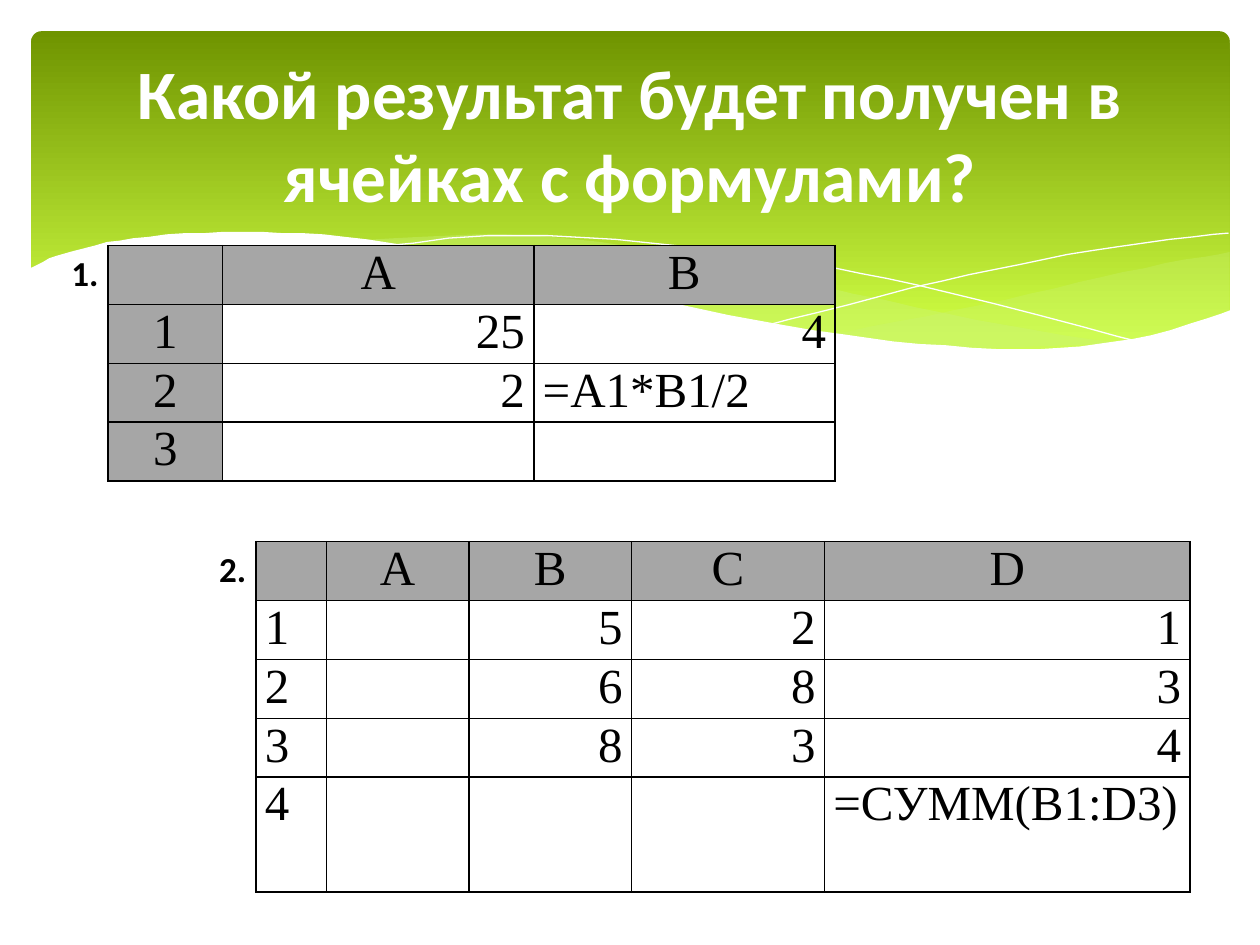
import pptx
import pptx.util
import pptx.dml.color
import pptx.enum.shapes
import pptx.enum.text
import pptx.oxml
from lxml import etree
from pptx.util import Cm

COLORS = {"dark": "6F9400", "lime": "D0FF44", "pale": "CAF278",
          "white": "FFFFFF", "black": "000000", "gray": "A6A6A6"}
TITLE = "Какой результат будет получен в ячейках с формулами?"

# Tables: label, places, column widths and row heights in cm
TABLES = [
    {"label": "1.", "left": 2.18, "top": 4.95,
     "columns": [2.31, 6.27, 6.07], "rows": [1.14] * 4, "gray_side": True,
     "cells": [["", "А", "В"],
               ["1", "25", "4"],
               ["2", "2", "=A1*B1/2"],
               ["3", "", ""]]},
    {"label": "2.", "left": 5.16, "top": 10.92,
     "columns": [1.42, 2.87, 3.28, 3.89, 7.37], "rows": [1.16] * 4 + [2.31],
     "gray_side": False,
     "cells": [["", "A", "B", "C", "D"],
               ["1", "", "5", "2", "1"],
               ["2", "", "6", "8", "3"],
               ["3", "", "8", "3", "4"],
               ["4", "", "", "", "=СУММ(B1:D3)"]]},
]
LABEL_OFFSET = 0.99

# Waves: each edge is a smooth curve through its knots (hundredths of an inch)
WAVE_UNIT = Cm(0.0254)
STEPS = 6
WAVES = [
    {"fill": "pale", "alpha": 29, "edges": [
        [(976, 200), (891, 216), (779, 242), (661, 265)],
        [(661, 265), (745, 275), (824, 277), (905, 269), (976, 247)]]},
    {"fill": "pale", "alpha": 40, "edges": [
        [(893, 273), (775, 254), (629, 222), (514, 198), (399, 186), (286, 191)],
        [(286, 191), (383, 207), (491, 232), (618, 258), (736, 275), (893, 273)]]},
    {"edges": [
        [(309, 195), (387, 187), (489, 190), (608, 204), (727, 226), (907, 272)]]},
    {"edges": [[(613, 257), (748, 223), (866, 199), (975, 185)]]},
    {"fill": "white", "alpha": 100, "edges": [
        [(977, 246), (899, 269), (809, 277), (688, 268), (555, 245), (418, 213),
         (292, 190), (193, 184), (106, 189), (52, 201), (23, 213)],
        [(23, 329), (977, 329)]]},
]


def rgb(name):
    return pptx.dml.color.RGBColor.from_string(COLORS[name])


def smooth(knots):
    """Sample a Catmull-Rom curve through the knots."""
    padded = [knots[0], *knots, knots[-1]]
    points = [knots[0]]
    for span in zip(padded, padded[1:], padded[2:], padded[3:]):
        for step in range(1, STEPS + 1):
            t = step / STEPS
            points.append(tuple(
                b + t / 2 * (c - a + t * (2 * a - 5 * b + 4 * c - d
                                          + t * (3 * b - 3 * c + d - a)))
                for a, b, c, d in zip(*span)))
    return points


def format_text(frame, size, font, color, align, bold=False):
    for para in frame.paragraphs:
        para.alignment = align
        for span in para.runs:
            span.font.size = pptx.util.Pt(size)
            span.font.name = font
            span.font.bold = bold
            span.font.color.rgb = rgb(color)


def add_wave(page, wave):
    first, *rest = [point for knots in wave["edges"] for point in smooth(knots)]
    filled = "fill" in wave
    builder = page.shapes.build_freeform(*first, scale=WAVE_UNIT)
    builder.add_line_segments(rest, close=filled)
    shape = builder.convert_to_shape()
    shape.shadow.inherit = False
    if filled:
        shape.line.fill.background()
        shape.fill.solid()
        shape.fill.fore_color.rgb = rgb(wave["fill"])
        if wave["alpha"] < 100:
            color = shape.fill._xPr.find(".//" + pptx.oxml.ns.qn("a:srgbClr"))
            etree.SubElement(color, pptx.oxml.ns.qn("a:alpha"),
                             val=str(wave["alpha"] * 1000))
    else:
        shape.fill.background()
        shape.line.color.rgb = rgb("white")
        shape.line.width = 0


def add_borders(cell):
    properties = cell._tc.get_or_add_tcPr()
    namespace = pptx.oxml.ns.nsdecls("a")
    for index, side in enumerate(("lnL", "lnR", "lnT", "lnB")):
        properties.insert(index, pptx.oxml.parse_xml(
            f'<a:{side} {namespace} w="12700"><a:solidFill>'
            f'<a:srgbClr val="{COLORS["black"]}"/></a:solidFill></a:{side}>'))


def cell_align(text, column, gray):
    if gray:
        return pptx.enum.text.PP_ALIGN.CENTER
    if column == 0 or text.startswith("="):
        return pptx.enum.text.PP_ALIGN.LEFT
    return pptx.enum.text.PP_ALIGN.RIGHT


def add_sheet(page, sheet):
    widths, heights = sheet["columns"], sheet["rows"]
    table = page.shapes.add_table(
        len(heights), len(widths), Cm(sheet["left"]), Cm(sheet["top"]),
        Cm(sum(widths)), Cm(sum(heights))).table
    table.first_row = table.horz_banding = False
    for column, width in zip(table.columns, widths):
        column.width = Cm(width)
    for row, height in zip(table.rows, heights):
        row.height = Cm(height)
    for r, texts in enumerate(sheet["cells"]):
        for c, text in enumerate(texts):
            cell = table.cell(r, c)
            gray = r == 0 or (c == 0 and sheet["gray_side"])
            cell.margin_left = cell.margin_right = Cm(0.18)
            cell.margin_top = cell.margin_bottom = 0
            if gray:
                cell.fill.solid()
                cell.fill.fore_color.rgb = rgb("gray")
            else:
                cell.fill.background()
            add_borders(cell)
            if text:
                cell.text_frame.text = text
                format_text(cell.text_frame, 28, "Times New Roman", "black",
                            cell_align(text, c, gray))


def add_label(page, sheet):
    box = page.shapes.add_textbox(Cm(sheet["left"] - LABEL_OFFSET),
                                  Cm(sheet["top"]), Cm(1.19), Cm(1.11))
    frame = box.text_frame
    frame.word_wrap = True
    frame.auto_size = pptx.enum.text.MSO_AUTO_SIZE.SHAPE_TO_FIT_TEXT
    frame.text = sheet["label"]
    format_text(frame, 20, "Calibri", "black",
                pptx.enum.text.PP_ALIGN.LEFT, bold=True)


def main():
    deck = pptx.Presentation()
    deck.slide_width, deck.slide_height = Cm(25.4), Cm(19.05)
    page = deck.slides.add_slide(deck.slide_layouts[6])

    # Green banner with waves
    banner = page.shapes.add_shape(
        pptx.enum.shapes.MSO_SHAPE.ROUNDED_RECTANGLE,
        Cm(0.63), Cm(0.63), Cm(24.16), Cm(6.86))
    banner.adjustments[0] = 0.03
    banner.shadow.inherit = False
    banner.line.fill.background()
    banner.fill.gradient()
    banner.fill.gradient_angle = 270
    for stop, name, position in zip(banner.fill.gradient_stops,
                                    ("dark", "lime"), (0, 0.9)):
        stop.color.rgb = rgb(name)
        stop.position = position
    for wave in WAVES:
        add_wave(page, wave)

    # Title
    box = page.shapes.add_textbox(Cm(1.27), Cm(0.94), Cm(22.86), Cm(3.48))
    frame = box.text_frame
    frame.word_wrap = True
    frame.vertical_anchor = pptx.enum.text.MSO_ANCHOR.MIDDLE
    frame.text = TITLE
    format_text(frame, 39.6, "Calibri", "white",
                pptx.enum.text.PP_ALIGN.CENTER, bold=True)

    # Spreadsheets, then their numbers
    for add_part in (add_sheet, add_label):
        for sheet in TABLES:
            add_part(page, sheet)
    deck.save("out.pptx")


if __name__ == "__main__":
    main()
